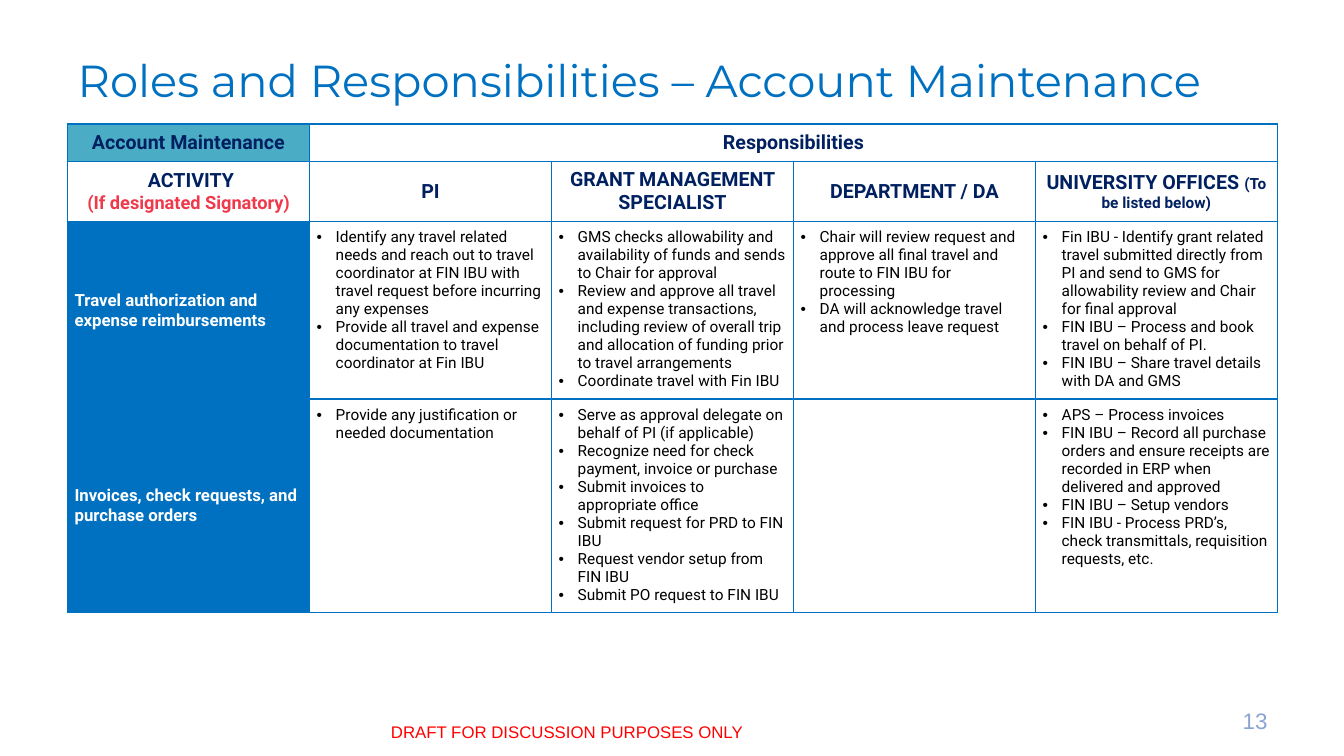
import pptx
import pptx.dml.color
import pptx.enum.text
import pptx.oxml
import pptx.oxml.ns
import pptx.util
from lxml import etree

RGB = pptx.dml.color.RGBColor
ALIGN = pptx.enum.text.PP_ALIGN
ANCHOR = pptx.enum.text.MSO_ANCHOR
Inches, Pt = pptx.util.Inches, pptx.util.Pt
qn = pptx.oxml.ns.qn

BLUE = RGB(0x00, 0x70, 0xC0)
NAVY = RGB(0x00, 0x20, 0x60)
TEAL = RGB(0x4B, 0xAC, 0xC6)
CORAL = RGB(0xEF, 0x3A, 0x4C)
RED = RGB(0xFF, 0x00, 0x00)
PALE_BLUE = RGB(0x8C, 0xA4, 0xD2)
WHITE = RGB(0xFF, 0xFF, 0xFF)
BLACK = RGB(0x00, 0x00, 0x00)

SLIDE_W, SLIDE_H = 13.33, 7.5
MARGIN = 0.67
COL_W = 2.4
ROW_H = [0.36, 0.59, 1.76, 2.12]
PAD = 0.07
INDENT = 0.19

# Header cells: lists of paragraphs, each a list of (text, size, colour) runs
HEADERS = [
    [[("\N{NO-BREAK SPACE}ACTIVITY", 14, NAVY)], [("(If designated Signatory)", 13, CORAL)]],
    [[("PI", 14, NAVY)]],
    [[("GRANT MANAGEMENT SPECIALIST", 14, NAVY)]],
    [[("DEPARTMENT / DA", 14, NAVY)]],
    [[("UNIVERSITY OFFICES ", 14, NAVY), ("(To be listed below)", 11, NAVY)]],
]

# Activity, then the bullets for each role
ACTIVITIES = [
    ("Travel authorization and expense reimbursements", [
        ["Identify any travel related needs and reach out to travel coordinator at FIN IBU "
         "with travel request before incurring any expenses",
         "Provide all travel and expense documentation to travel coordinator at Fin IBU"],
        ["GMS checks allowability and availability of funds and sends to Chair for approval",
         "Review and approve all travel and expense transactions, including review of overall "
         "trip and allocation of funding prior to travel arrangements",
         "Coordinate travel with Fin IBU"],
        ["Chair will review request and approve all final travel and route to FIN IBU for processing",
         "DA will acknowledge travel and process leave request"],
        ["Fin IBU - Identify grant related travel submitted directly from PI and send to GMS for "
         "allowability review and Chair for final approval",
         "FIN IBU – Process and book travel on behalf of PI.",
         "FIN IBU – Share travel details with DA and GMS"],
    ]),
    ("Invoices, check requests, and purchase orders", [
        ["Provide any justification or needed documentation"],
        ["Serve as approval delegate on behalf of PI (if applicable)",
         "Recognize need for check payment, invoice or purchase",
         "Submit invoices to appropriate office",
         "Submit request for PRD to FIN IBU",
         "Request vendor setup from FIN IBU",
         "Submit PO request to FIN IBU"],
        [],
        ["APS – Process invoices",
         "FIN IBU – Record all purchase orders and ensure receipts are recorded in ERP when "
         "delivered and approved",
         "FIN IBU – Setup vendors",
         "FIN IBU - Process PRD’s, check transmittals, requisition requests, etc."],
    ]),
]


def add_run(p, text, size=11, color=BLACK, font="Roboto", bold=False):
    r = p.add_run()
    r.text = text
    r.font.size, r.font.name, r.font.bold = Pt(size), font, bold
    r.font.color.rgb = color


def add_bullet(p):
    pPr = p._p.get_or_add_pPr()
    pPr.set("marL", str(Inches(INDENT)))
    pPr.set("indent", str(-Inches(INDENT)))
    etree.SubElement(pPr, qn("a:buFont")).set("typeface", "Arial")
    etree.SubElement(pPr, qn("a:buChar")).set("char", "•")


def paragraphs(tf, count):
    """Yield count paragraphs, starting with the one already there."""
    for i in range(count):
        yield tf.paragraphs[0] if i == 0 else tf.add_paragraph()


def style_cell(cell, fill=None, anchor=ANCHOR.MIDDLE, pad=PAD):
    tcPr = cell._tc.get_or_add_tcPr()
    for side in ("a:lnL", "a:lnR", "a:lnT", "a:lnB"):
        ln = etree.SubElement(tcPr, qn(side), w=str(Pt(1)))
        solid = etree.SubElement(ln, qn("a:solidFill"))
        etree.SubElement(solid, qn("a:srgbClr"), val=str(BLUE))
    if fill is None:
        cell.fill.background()
    else:
        cell.fill.solid()
        cell.fill.fore_color.rgb = fill
    cell.vertical_anchor = anchor
    cell.margin_left = cell.margin_right = Inches(pad)
    cell.margin_top = cell.margin_bottom = Inches(pad)


def fill_header(cell, lines, fill=None, pad=PAD):
    style_cell(cell, fill, pad=pad)
    for p, runs in zip(paragraphs(cell.text_frame, len(lines)), lines):
        p.alignment = ALIGN.CENTER
        for text, size, color in runs:
            add_run(p, text, size, color, bold=True)


def fill_bullets(cell, items):
    style_cell(cell, WHITE, ANCHOR.TOP)
    for p, text in zip(paragraphs(cell.text_frame, len(items)), items):
        add_bullet(p)
        add_run(p, text)


def add_title(slide, x, y, w, h):
    sp = slide.shapes.title
    sp.left, sp.top, sp.width, sp.height = map(Inches, (x, y, w, h))
    tf = sp.text_frame
    tf.vertical_anchor = ANCHOR.TOP
    p = tf.paragraphs[0]
    p.alignment = ALIGN.LEFT
    p.line_spacing = Pt(47.2)
    add_run(p, "Roles and Responsibilities – Account Maintenance", 32, BLUE, "Montserrat")


def add_roles_table(slide, x, y):
    cols = len(HEADERS)
    frame = slide.shapes.add_table(len(ROW_H), cols, Inches(x), Inches(y),
                                   Inches(COL_W * cols), Inches(sum(ROW_H)))
    table = frame.table
    table.first_row = table.horz_banding = False
    for col in table.columns:
        col.width = Inches(COL_W)
    for row, height in zip(table.rows, ROW_H):
        row.height = Inches(height)

    # Heading rows
    fill_header(table.cell(0, 0), [[("Account Maintenance", 14, NAVY)]], TEAL)
    fill_header(table.cell(0, 1), [[("Responsibilities", 14, NAVY)]])
    for c in range(2, cols):
        style_cell(table.cell(0, c))
    table.cell(0, 1).merge(table.cell(0, cols - 1))
    for c, lines in enumerate(HEADERS):
        fill_header(table.cell(1, c), lines, pad=PAD if c else 0)

    # Activity rows
    for r, (activity, roles) in enumerate(ACTIVITIES, start=2):
        cell = table.cell(r, 0)
        style_cell(cell, BLUE)
        add_run(cell.text_frame.paragraphs[0], activity, 12, WHITE, bold=True)
        for c, items in enumerate(roles, start=1):
            fill_bullets(table.cell(r, c), items)


def add_label(slide, x, y, w, h, text, align=ALIGN.LEFT, anchor=ANCHOR.TOP, **fmt):
    tf = slide.shapes.add_textbox(*map(Inches, (x, y, w, h))).text_frame
    tf.word_wrap = True
    tf.vertical_anchor = anchor
    p = tf.paragraphs[0]
    p.alignment = align
    add_run(p, text, font="Arial", **fmt)


def main():
    prs = pptx.Presentation()
    prs.slide_width, prs.slide_height = Inches(SLIDE_W), Inches(SLIDE_H)
    slide = prs.slides.add_slide(prs.slide_layouts[5])
    add_title(slide, MARGIN, 0.35, SLIDE_W - MARGIN, 0.73)
    add_roles_table(slide, MARGIN, 1.23)
    # Footer
    add_label(slide, 9.56, 6.95, 3.11, 0.4, "13", ALIGN.RIGHT, ANCHOR.MIDDLE,
              size=16, color=PALE_BLUE)
    add_label(slide, 3.78, 7.11, 5.76, 0.39, "DRAFT FOR DISCUSSION PURPOSES ONLY",
              size=12, color=RED)
    prs.save("out.pptx")


if __name__ == "__main__":
    main()
